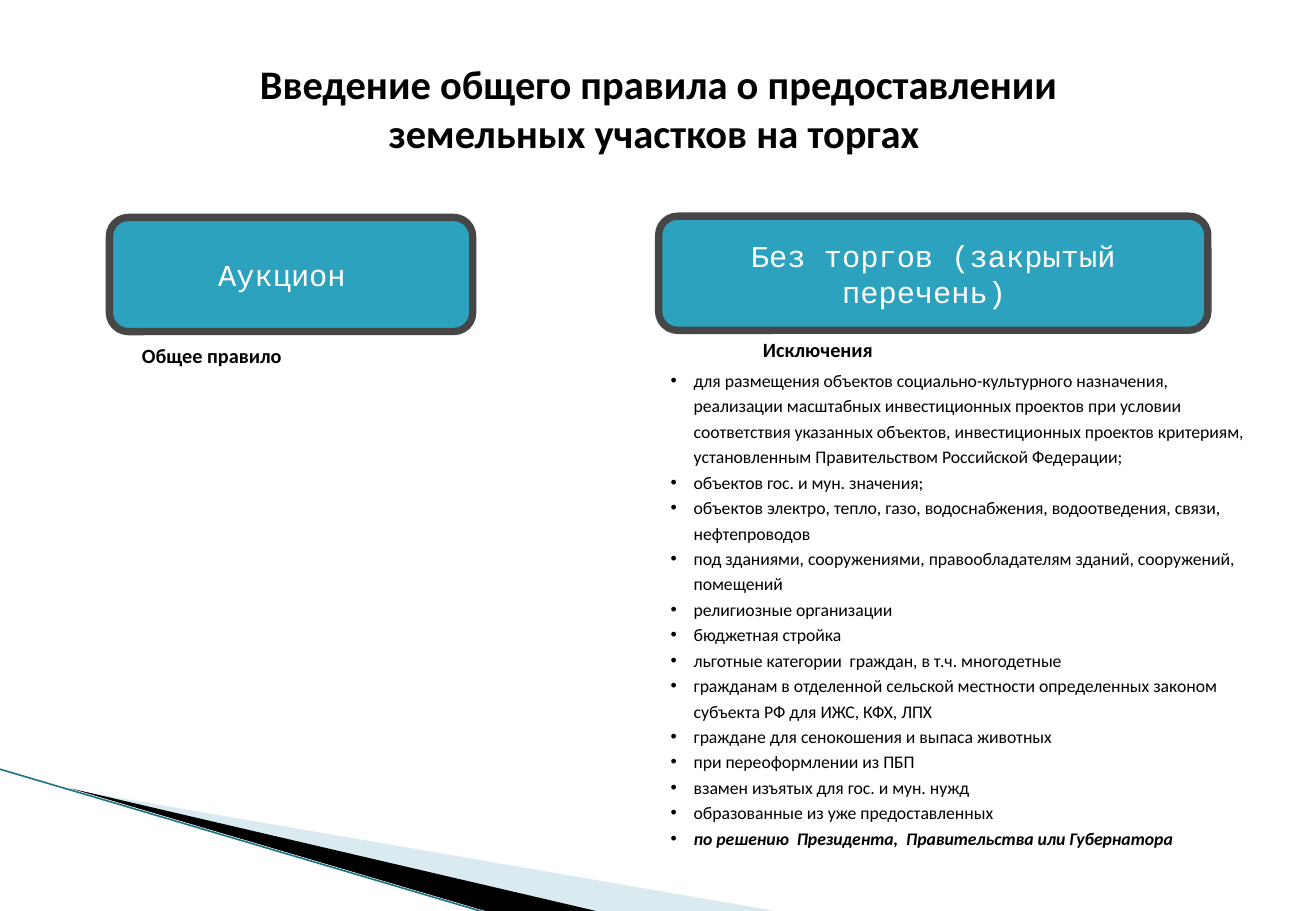
from lxml.etree import SubElement
from pptx import Presentation
from pptx.dml.color import RGBColor
from pptx.enum.shapes import MSO_CONNECTOR, MSO_SHAPE
from pptx.enum.text import MSO_ANCHOR, PP_ALIGN
from pptx.oxml.ns import qn
from pptx.util import Pt

PX = 9144  # EMU per px, 100 px to the inch
SLIDE_WIDTH, SLIDE_HEIGHT = 1083, 750
COLORS = {
    "text": "000000", "card": "2DA2BF", "card_line": "464646", "card_text": "FFFFFF",
    "pale_wedge": "A0CBDC", "dark_wedge": "000000", "edge": "1F7388",
}
TITLE = ["Введение общего правила о предоставлении", "земельных участков на торгах "]
EXCEPTIONS = [
    "для размещения объектов социально-культурного назначения, реализации масштабных "
    "инвестиционных проектов при условии соответствия указанных объектов, инвестиционных "
    "проектов критериям, установленным Правительством Российской Федерации;",
    "объектов гос. и мун. значения;",
    "объектов электро, тепло, газо, водоснабжения, водоотведения, связи, нефтепроводов",
    "под зданиями, сооружениями, правообладателям зданий, сооружений, помещений",
    "религиозные организации",
    "бюджетная стройка",
    "льготные категории  граждан, в т.ч. многодетные",
    "гражданам в отделенной сельской местности определенных законом субъекта РФ "
    "для ИЖС, КФХ, ЛПХ",
    "граждане для сенокошения и выпаса животных",
    "при переоформлении из ПБП",
    "взамен изъятых для гос. и мун. нужд",
    "образованные из уже предоставленных",
    "по решению  Президента,  Правительства или Губернатора",
]


def color(name):
    return RGBColor.from_string(COLORS[name])


def emu(*lengths):
    return [length * PX for length in lengths]


def set_font(paragraph, name, size, color_name, bold=False):
    font = paragraph.font
    font.name, font.size, font.bold = name, Pt(size), bold
    font.color.rgb = color(color_name)


def add_text(slide, box, lines, size, bold=False, align=PP_ALIGN.LEFT):
    """Add a text box with one paragraph per line and return its paragraphs."""
    frame = slide.shapes.add_textbox(*emu(*box)).text_frame
    frame.word_wrap = True
    frame.text = "\n".join(lines)
    for paragraph in frame.paragraphs:
        paragraph.alignment = align
        set_font(paragraph, "Calibri", size, "text", bold)
    return frame.paragraphs


def add_wedge(slide, points, color_name, alpha=None):
    builder = slide.shapes.build_freeform(*points[0], scale=PX)
    builder.add_line_segments(points[1:], close=True)
    wedge = builder.convert_to_shape()
    wedge.shadow.inherit = False
    wedge.fill.solid()
    wedge.fill.fore_color.rgb = color(color_name)
    wedge.line.fill.background()
    if alpha is not None:
        fill_color = wedge.fill._xPr.find(qn("a:solidFill"))[0]
        SubElement(fill_color, qn("a:alpha"), val=str(alpha * 1000))


def add_corner_decoration(slide, left, top):
    """Draw the wedges and the edge line that start at the left side of the slide."""
    bottom = SLIDE_HEIGHT + 1
    tip_x, tip_y = left + 58, top + 17
    add_wedge(slide, [(tip_x, tip_y), (left + 644, bottom), (left + 494, bottom)],
              "pale_wedge", alpha=40)
    add_wedge(slide, [(tip_x, tip_y - 1), (left + 495, bottom), (left + 403, bottom)],
              "dark_wedge")
    edge = slide.shapes.add_connector(
        MSO_CONNECTOR.STRAIGHT, *emu(left - 1, top, left + 402, bottom + 1))
    edge.line.color.rgb = color("edge")
    edge.line.width = Pt(0.95)
    SubElement(edge._element.spPr, qn("a:effectLst"))


def add_card(slide, box, text):
    card = slide.shapes.add_shape(MSO_SHAPE.ROUNDED_RECTANGLE, *emu(*box))
    card.shadow.inherit = False
    card.fill.solid()
    card.fill.fore_color.rgb = color("card")
    card.line.color.rgb = color("card_line")
    card.line.width = Pt(4.33)
    frame = card.text_frame
    frame.word_wrap = True
    frame.vertical_anchor = MSO_ANCHOR.MIDDLE
    frame.text = text
    paragraph = frame.paragraphs[0]
    paragraph.alignment = PP_ALIGN.CENTER
    set_font(paragraph, "Courier New", 18, "card_text")


def add_column(slide, box, heading, label, label_offset):
    """Add a card and, at an offset from its lower left corner, a bold label."""
    left, top, width, height = box
    offset_x, offset_y = label_offset
    add_card(slide, box, heading)
    add_text(slide, (left + offset_x, top + height + offset_y, 299, 30), [label], 12, bold=True)


def add_exceptions(slide, box):
    paragraphs = add_text(slide, box, EXCEPTIONS, 10.5)
    indent = 19 * PX
    for paragraph in paragraphs:
        paragraph.line_spacing = 1.2
        properties = paragraph._p.get_or_add_pPr()
        properties.set("marL", str(indent))
        properties.set("indent", str(-indent))
        bullet_font = properties.makeelement(qn("a:buFont"), {"typeface": "Arial"})
        bullet = properties.makeelement(qn("a:buChar"), {"char": "•"})
        properties.find(qn("a:lnSpc")).addnext(bullet_font)
        bullet_font.addnext(bullet)
    paragraphs[-1].font.bold = True
    paragraphs[-1].font.italic = True


def main():
    presentation = Presentation()
    presentation.slide_width, presentation.slide_height = emu(SLIDE_WIDTH, SLIDE_HEIGHT)
    slide = presentation.slides.add_slide(presentation.slide_layouts[6])
    add_corner_decoration(slide, 0, 633)
    add_text(slide, (47, 44, 990, 91), TITLE, 24, bold=True, align=PP_ALIGN.CENTER)
    add_column(slide, (90, 179, 299, 94), "Аукцион ", "Общее правило", (17, 5))
    add_column(slide, (542, 178, 452, 94), "Без торгов (закрытый перечень) ",
               "Исключения", (76, 1))
    add_exceptions(slide, (542, 296, 495, 413))
    presentation.save("out.pptx")


if __name__ == "__main__":
    main()
